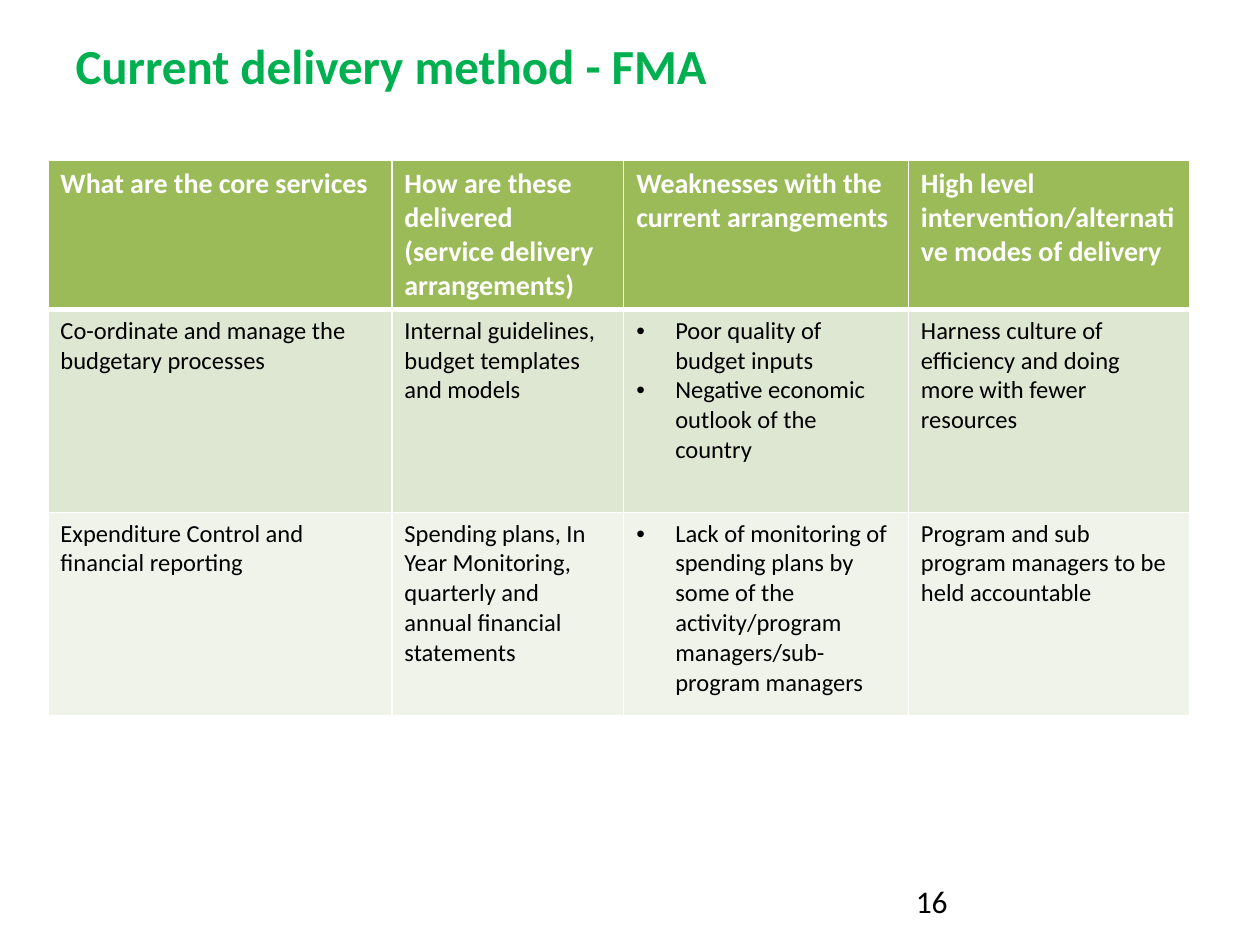
from lxml import etree
from pptx import Presentation
from pptx.dml.color import RGBColor
from pptx.enum.text import MSO_ANCHOR, MSO_AUTO_SIZE, PP_ALIGN
from pptx.oxml.ns import qn
from pptx.util import Inches, Pt

LEFT = PP_ALIGN.LEFT
MIDDLE = MSO_ANCHOR.MIDDLE
NO_AUTOFIT = MSO_AUTO_SIZE.NONE

FONT = "Calibri"
TITLE_GREEN = RGBColor(0x00, 0xB0, 0x50)
HEADER_GREEN = RGBColor(0x9B, 0xBB, 0x59)
BAND_DARK = RGBColor(0xDE, 0xE7, 0xD1)
BAND_LIGHT = RGBColor(0xEF, 0xF3, 0xEA)
WHITE = RGBColor(0xFF, 0xFF, 0xFF)
BLACK = RGBColor(0x00, 0x00, 0x00)

COLUMN_WIDTHS = [2.73, 1.84, 2.26, 2.23]
ROW_HEIGHTS = [1.16, 1.61, 1.61]
ROW_FILLS = [HEADER_GREEN, BAND_DARK, BAND_LIGHT]
BULLET_COLUMN = 2
BULLET_INDENT = Inches(0.31)

# Each cell holds its paragraphs, separated by line breaks
ROWS = [
    ["What are the core services",
     "How are these delivered\n(service delivery arrangements)",
     "Weaknesses with the current arrangements",
     "High level intervention/alternative modes of delivery"],
    ["Co-ordinate and manage the budgetary processes",
     "Internal guidelines, budget templates and models",
     "Poor quality of budget inputs\nNegative economic outlook of the country",
     "Harness culture of efficiency and doing more with fewer resources"],
    ["Expenditure Control and financial reporting",
     "Spending plans, In Year Monitoring, quarterly and annual financial statements",
     "Lack of monitoring of spending plans by some of the activity/program "
     "managers/sub-program managers",
     "Program and sub program managers to be held accountable"],
]


def format_text(text_frame, size, color, bold=False):
    for paragraph in text_frame.paragraphs:
        paragraph.alignment = LEFT
        for run in paragraph.runs:
            run.font.name = FONT
            run.font.size = Pt(size)
            run.font.bold = bold
            run.font.color.rgb = color


def set_borders(cell, widths):
    properties = cell._tc.get_or_add_tcPr()
    for position, (side, width) in enumerate(widths.items()):
        line = etree.Element(qn(f"a:ln{side}"), w=str(Pt(width)))
        fill = etree.SubElement(line, qn("a:solidFill"))
        etree.SubElement(fill, qn("a:srgbClr"), val=str(WHITE))
        properties.insert(position, line)


presentation = Presentation()
presentation.slide_width = Inches(10)
presentation.slide_height = Inches(7.5)
slide = presentation.slides.add_slide(presentation.slide_layouts[5])

# Title
title = slide.shapes.title
title.left, title.top = Inches(0.5), Inches(0.23)
title.width, title.height = Inches(9.29), Inches(0.57)
title.text_frame.text = "Current delivery method - FMA"
title.text_frame.auto_size = NO_AUTOFIT
title.text_frame.vertical_anchor = MIDDLE
format_text(title.text_frame, 28, TITLE_GREEN, bold=True)

# Table of services
table = slide.shapes.add_table(
    len(ROWS), len(COLUMN_WIDTHS), Inches(0.38), Inches(1.27),
    Inches(sum(COLUMN_WIDTHS)), Inches(sum(ROW_HEIGHTS))).table
for column, width in zip(table.columns, COLUMN_WIDTHS):
    column.width = Inches(width)
for row, height in zip(table.rows, ROW_HEIGHTS):
    row.height = Inches(height)

for row_index, texts in enumerate(ROWS):
    is_header = row_index == 0
    for column_index, text in enumerate(texts):
        cell = table.cell(row_index, column_index)
        cell.fill.solid()
        cell.fill.fore_color.rgb = ROW_FILLS[row_index]
        # A thick rule separates the header from the body
        set_borders(cell, {"L": 1, "R": 1,
                           "T": 3 if row_index == 1 else 1,
                           "B": 3 if is_header else 1})
        cell.text_frame.text = text
        if column_index == BULLET_COLUMN and not is_header:
            for paragraph in cell.text_frame.paragraphs:
                properties = paragraph._p.get_or_add_pPr()
                properties.set("marL", str(BULLET_INDENT))
                properties.set("indent", str(-BULLET_INDENT))
                etree.SubElement(properties, qn("a:buFont"), typeface="Arial")
                etree.SubElement(properties, qn("a:buChar"), char="•")
        format_text(cell.text_frame, 16 if is_header else 14,
                    WHITE if is_header else BLACK, bold=is_header)

# Page number
page_number = slide.shapes.add_textbox(
    Inches(7.17), Inches(6.95), Inches(2.33), Inches(0.4))
page_number.text_frame.word_wrap = True
page_number.text_frame.text = "16"
format_text(page_number.text_frame, 18, BLACK)

presentation.save("out.pptx")
